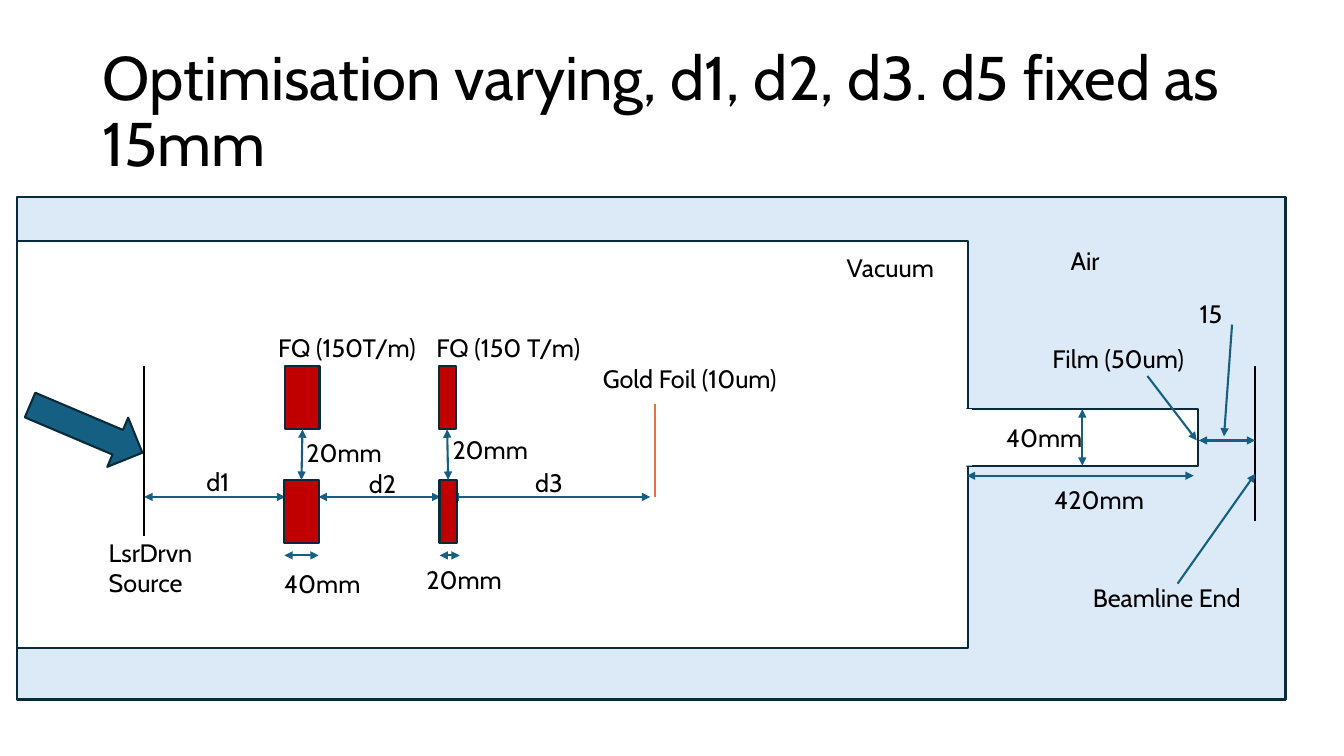
import pptx
import pptx.dml.color
import pptx.enum.shapes
import pptx.enum.text
import pptx.oxml
import pptx.oxml.ns
import pptx.util

Inches = pptx.util.Inches
SHAPES = pptx.enum.shapes.MSO_SHAPE
TOP, BOTTOM = 0, 2


class BeamlineSlide:
    font = "Cabin"
    line_width = 1.5
    colours = {
        "text": "000000",
        "air": "DCEAF7",
        "vacuum": "FFFFFF",
        "outline": "092A39",
        "arrow": "156082",
        "magnet": "C00000",
        "gold": "E97132",
    }

    def __init__(self, slide):
        self.shapes = slide.shapes

    def colour(self, name):
        return pptx.dml.color.RGBColor.from_string(self.colours[name])

    def block(self, left, top, width, height, fill, outlined=True, kind=SHAPES.RECTANGLE, rotation=0):
        block = self.shapes.add_shape(kind, Inches(left), Inches(top), Inches(width), Inches(height))
        block.shadow.inherit = False
        block.rotation = rotation
        block.fill.solid()
        block.fill.fore_color.rgb = self.colour(fill)
        if outlined:
            block.line.color.rgb = self.colour("outline")
            block.line.width = pptx.util.Pt(self.line_width)
        else:
            block.line.fill.background()
        return block

    def line(self, start, end, colour="text", heads=()):
        line = self.shapes.add_connector(
            pptx.enum.shapes.MSO_CONNECTOR.STRAIGHT,
            Inches(start[0]), Inches(start[1]), Inches(end[0]), Inches(end[1]))
        line.line.color.rgb = self.colour(colour)
        line.line.width = pptx.util.Pt(self.line_width)
        for head in heads:
            arrowhead = pptx.oxml.parse_xml(
                f'<a:{head} {pptx.oxml.ns.nsdecls("a")} type="triangle"/>')
            line.line._get_or_add_ln().append(arrowhead)
        line._element.spPr.append(
            pptx.oxml.parse_xml(f'<a:effectLst {pptx.oxml.ns.nsdecls("a")}/>'))
        return line

    def dimension(self, start, end):
        return self.line(start, end, "arrow", ("headEnd", "tailEnd"))

    def pointer(self, start, end):
        return self.line(start, end, "arrow", ("tailEnd",))

    def gap(self, x, lower, upper, bottom, top):
        gap = self.dimension((x, bottom), (x, top))
        gap.begin_connect(*lower)
        gap.end_connect(*upper)

    def text(self, words, left, top, width, height=0.4, size=18, spacing=1.0,
             anchor=pptx.enum.text.MSO_ANCHOR.TOP):
        box = self.shapes.add_textbox(Inches(left), Inches(top), Inches(width), Inches(height))
        box.text_frame.word_wrap = True
        box.text_frame.vertical_anchor = anchor
        paragraph = box.text_frame.paragraphs[0]
        paragraph.line_spacing = spacing
        run = paragraph.add_run()
        run.text = words
        run.font.name = self.font
        run.font.size = pptx.util.Pt(size)
        run.font.color.rgb = self.colour("text")


def main():
    deck = pptx.Presentation()
    deck.slide_width, deck.slide_height = Inches(13.33), Inches(7.5)
    beamline = BeamlineSlide(deck.slides.add_slide(deck.slide_layouts[6]))

    beamline.text("Optimisation varying, d1, d2, d3. d5 fixed as 15mm", 0.92, 0.4, 11.5, 1.45,
                  size=44, spacing=0.9, anchor=pptx.enum.text.MSO_ANCHOR.MIDDLE)

    beamline.block(0.17, 1.95, 12.58, 4.99, "air")
    beamline.block(0.17, 2.39, 9.43, 4.04, "vacuum")
    pipe = beamline.block(9.59, 4.06, 2.29, 0.56, "vacuum")
    beamline.block(9.48, 4.06, 0.16, 0.56, "vacuum", outlined=False)

    beamline.line((12.45, 3.63), (12.45, 5.17))
    beamline.line((6.5, 4.01), (6.5, 4.93), "gold")

    for y, left, right in [
        (4.93, 1.43, 2.83),
        (4.93, 3.16, 4.37),
        (4.93, 4.47, 6.45),
        (4.72, 9.59, 11.84),
        (4.37, 11.89, 12.45),
        (5.51, 2.82, 3.16),
        (5.51, 4.36, 4.56),
    ]:
        beamline.dimension((left, y), (right, y))

    upper_top, lower_top, magnet_height = 3.63, 4.76, 0.63
    for upper_left, lower_left, width in [(2.83, 2.82, 0.34), (4.35, 4.36, 0.17)]:
        lower = beamline.block(lower_left, lower_top, width, magnet_height, "magnet")
        upper = beamline.block(upper_left, upper_top, width, magnet_height, "magnet")
        beamline.gap(lower_left + width / 2, (lower, TOP), (upper, BOTTOM),
                     lower_top, upper_top + magnet_height)
    beamline.gap(10.74, (pipe, BOTTOM), (pipe, TOP), 4.62, 4.06)

    beamline.block(0.25, 3.99, 1.21, 0.53, "arrow", kind=SHAPES.RIGHT_ARROW, rotation=23)
    beamline.line((1.43, 3.63), (1.43, 5.32))

    for start, end in [
        ((11.38, 3.73), (11.87, 4.37)),
        ((11.68, 5.79), (12.45, 4.7)),
        ((12.22, 3.22), (12.14, 4.33)),
    ]:
        beamline.pointer(start, end)

    for words, left, top, width in [
        ("d1", 1.95, 4.58, 1.37),
        ("d2", 3.56, 4.6, 1.37),
        ("d3", 5.21, 4.59, 1.37),
        ("420mm", 10.36, 4.76, 1.37),
        ("15", 11.8, 2.91, 1.37),
        ("FQ (150T/m)", 2.66, 3.25, 1.76),
        ("FQ (150 T/m)", 4.23, 3.25, 1.66),
        ("Gold Foil (10um)", 5.88, 3.56, 2.18),
        ("40mm", 2.72, 5.59, 1.02),
        ("20mm", 4.13, 5.55, 1.02),
        ("20mm", 2.94, 4.29, 1.02),
        ("20mm", 4.39, 4.26, 1.02),
        ("40mm", 9.88, 4.14, 1.02),
        ("Film (50um)", 10.34, 3.36, 1.65),
        ("Vacuum", 8.3, 2.45, 1.37),
        ("Air", 10.52, 2.38, 1.37),
        ("Beamline End", 10.74, 5.73, 1.74),
    ]:
        beamline.text(words, left, top, width)
    beamline.text("LsrDrvn Source", 0.98, 5.28, 1.19, 0.71)

    deck.save("out.pptx")


if __name__ == "__main__":
    main()
